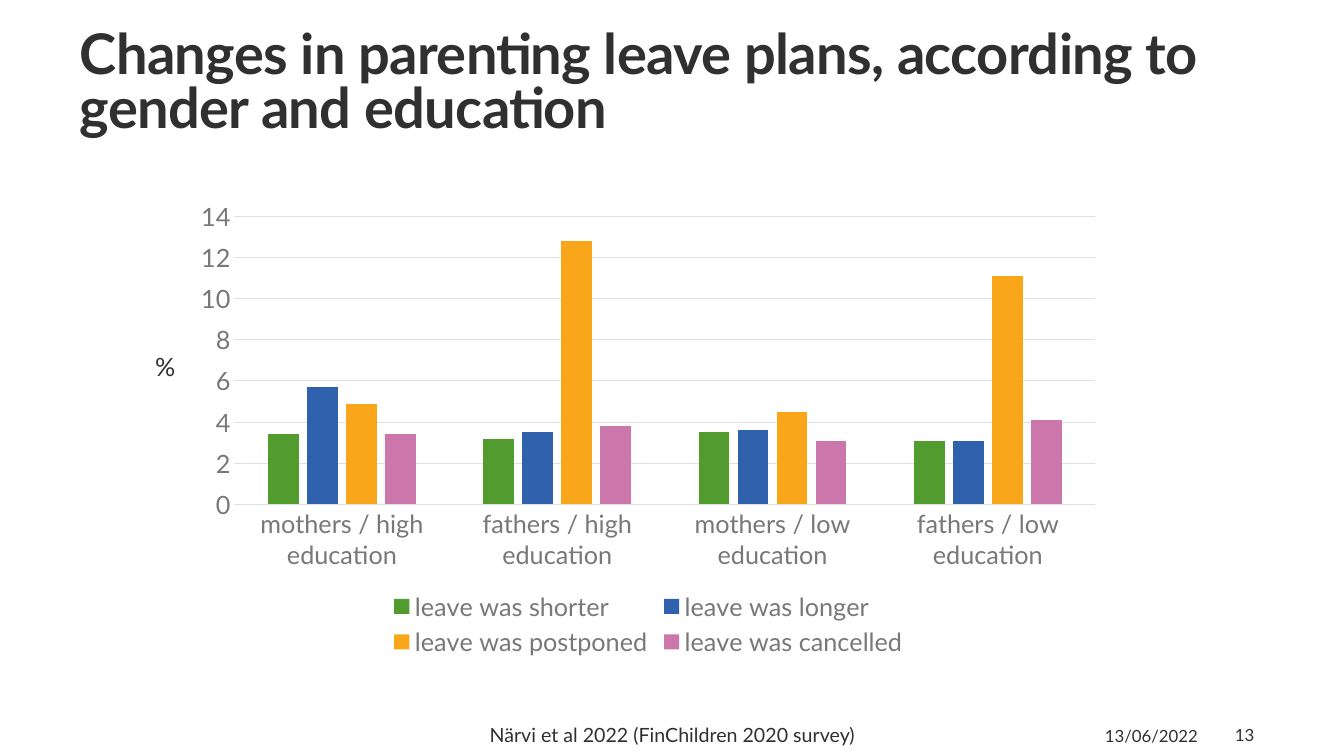
from pptx import Presentation
from pptx.chart.data import CategoryChartData
from pptx.dml.color import RGBColor
from pptx.enum.chart import XL_CHART_TYPE, XL_LEGEND_POSITION, XL_TICK_MARK
from pptx.enum.text import MSO_ANCHOR, PP_ALIGN
from pptx.util import Inches, Pt

COLORS = {
    "ink": "303030",
    "label": "787878",
    "grid": "E0E0E0",
    "shorter": "519B2F",
    "longer": "2F61AD",
    "postponed": "FAA61A",
    "cancelled": "CC77AC",
}
FONT = "Lato"
GROUPS = [
    "mothers / high education",
    "fathers / high education",
    "mothers / low education",
    "fathers / low education",
]
LEAVE_CHANGES = {
    "shorter": (3.4, 3.2, 3.5, 3.1),
    "longer": (5.7, 3.5, 3.6, 3.1),
    "postponed": (4.9, 12.8, 4.5, 11.1),
    "cancelled": (3.4, 3.8, 3.1, 4.1),
}


def color(name):
    return RGBColor.from_string(COLORS[name])


def style_font(font, size, name):
    font.name = FONT
    font.size = Pt(size)
    font.color.rgb = color(name)


def style_line(line, name):
    line.color.rgb = color(name)
    line.width = Pt(0.75)


def add_text(page, box, text, size, align=PP_ALIGN.LEFT, anchor=MSO_ANCHOR.MIDDLE):
    frame = page.shapes.add_textbox(*map(Inches, box)).text_frame
    frame.word_wrap = True
    frame.vertical_anchor = anchor
    frame.text = text
    para = frame.paragraphs[0]
    para.alignment = align
    style_font(para.runs[0].font, size, "ink")
    return frame


def add_title(page, box):
    text = "Changes in parenting leave plans, according to gender and education"
    frame = add_text(page, box, text, 40)
    frame.margin_left = 0
    frame.margin_right = Inches(0.08)
    frame.margin_top = frame.margin_bottom = Inches(0.04)
    para = frame.paragraphs[0]
    para.line_spacing = 0.8
    font = para.runs[0].font
    font.bold = True
    font._element.set("spc", "-40")


def add_leave_chart(page, box):
    left, top, width, height = box
    data = CategoryChartData()
    data.categories = GROUPS
    for change, values in LEAVE_CHANGES.items():
        data.add_series(f"leave was {change}", values)
    chart = page.shapes.add_chart(
        XL_CHART_TYPE.COLUMN_CLUSTERED, *map(Inches, box), data
    ).chart
    style_font(chart.font, 18, "ink")
    chart.has_title = False

    chart.has_legend = True
    chart.legend.position = XL_LEGEND_POSITION.BOTTOM
    chart.legend.include_in_layout = False
    style_font(chart.legend.font, 18, "label")

    plot = chart.plots[0]
    plot.gap_width = 219
    plot.overlap = -27
    plot.vary_by_categories = False
    for series, change in zip(plot.series, LEAVE_CHANGES):
        series.format.fill.solid()
        series.format.fill.fore_color.rgb = color(change)

    for axis in (chart.category_axis, chart.value_axis):
        axis.major_tick_mark = axis.minor_tick_mark = XL_TICK_MARK.NONE
        style_font(axis.tick_labels.font, 18, "label")
    style_line(chart.category_axis.format.line, "grid")
    chart.value_axis.format.line.fill.background()
    chart.value_axis.has_major_gridlines = True
    style_line(chart.value_axis.major_gridlines.format.line, "grid")
    chart.value_axis.minimum_scale = 0
    chart.value_axis.maximum_scale = 14
    chart.value_axis.major_unit = 2

    unit_box = (left - 0.37, top + 1.54, 0.38, 0.4)
    add_text(page, unit_box, "%", 18, anchor=MSO_ANCHOR.TOP)


def add_footer(page, box):
    left, top, width, height = box
    right = left + width
    source = "Närvi et al 2022 (FinChildren 2020 survey)"
    add_text(page, (left, top, 7.6, height), source, 14, PP_ALIGN.CENTER)
    add_text(page, (right - 1.74, top, 1.18, 0.42), "13/06/2022", 12, PP_ALIGN.RIGHT)
    add_text(page, (right - 0.56, top, 0.56, height), "13", 12, PP_ALIGN.RIGHT)


def main():
    deck = Presentation()
    deck.slide_width = Inches(13.33)
    deck.slide_height = Inches(7.5)
    page = deck.slides.add_slide(deck.slide_layouts[6])
    add_title(page, (0.79, 0.2, 11.76, 1.3))
    add_leave_chart(page, (1.81, 1.9, 9.24, 4.67))
    add_footer(page, (2.87, 7.09, 9.67, 0.4))
    deck.save("out.pptx")


if __name__ == "__main__":
    main()
